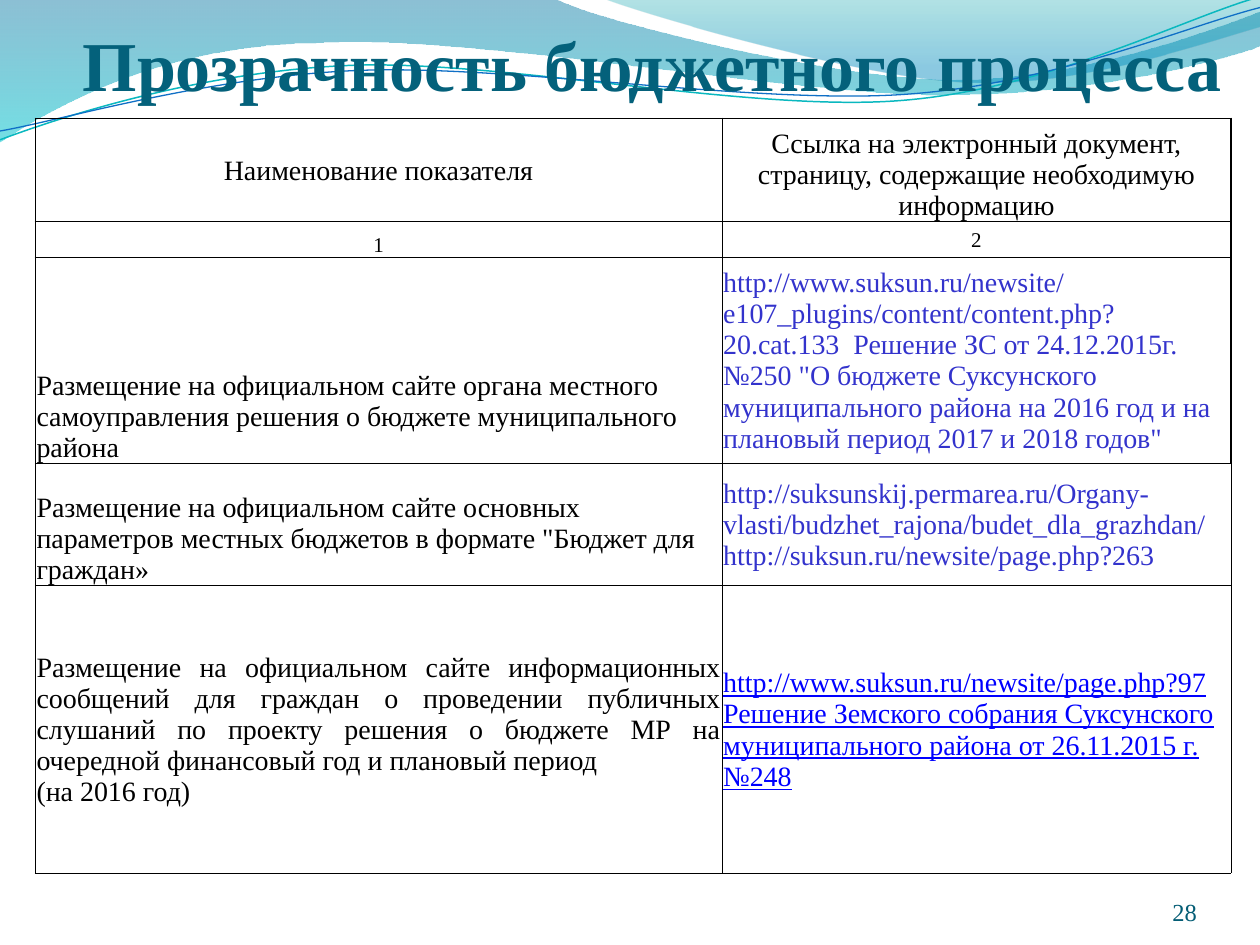
from lxml import etree
from pptx import Presentation
from pptx.dml.color import RGBColor
from pptx.enum.text import MSO_ANCHOR, PP_ALIGN
from pptx.oxml import parse_xml
from pptx.oxml.ns import nsdecls, qn
from pptx.util import Inches, Pt

LEFT, MID, RIGHT, FULL = PP_ALIGN.LEFT, PP_ALIGN.CENTER, PP_ALIGN.RIGHT, PP_ALIGN.JUSTIFY
CENTER, BOTTOM = MSO_ANCHOR.MIDDLE, MSO_ANCHOR.BOTTOM
FONT = "Times New Roman"
BLACK, BLUE, LINK = "000000", "3333CC", "0000FF"

TITLE = "Прозрачность бюджетного процесса"
PAGE = "28"

# Cells: paragraphs, size, colour, alignment, anchor
ROWS = [
    [(["Наименование показателя"], 16, BLACK, MID, CENTER),
     (["Ссылка на электронный документ, страницу, содержащие необходимую информацию"],
      16, BLACK, MID, BOTTOM)],
    [(["1"], 12, BLACK, MID, BOTTOM),
     (["2"], 12, BLACK, MID, CENTER)],
    [(["Размещение на официальном сайте органа местного самоуправления решения "
       "о бюджете муниципального района"], 16, BLACK, LEFT, BOTTOM),
     (["http://www.suksun.ru/newsite/e107_plugins/content/content.php?20.cat.133  "
       "Решение ЗС от 24.12.2015г. №250 \"О бюджете Суксунского муниципального района "
       "на 2016 год и на плановый период 2017 и 2018 годов\""], 16, BLUE, LEFT, CENTER)],
    [(["Размещение на официальном сайте основных параметров местных бюджетов "
       "в формате \"Бюджет для граждан»"], 16, BLACK, LEFT, BOTTOM),
     (["http://suksunskij.permarea.ru/Organy-vlasti/budzhet_rajona/budet_dla_grazhdan/",
       "http://suksun.ru/newsite/page.php?263"], 16, BLUE, LEFT, CENTER)],
    [(["Размещение на официальном сайте информационных сообщений для граждан "
       "о проведении публичных слушаний по проекту решения о бюджете МР "
       "на очередной финансовый год и плановый период",
       "(на 2016 год)"], 16, BLACK, FULL, CENTER),
     (["http://www.suksun.ru/newsite/page.php?97 Решение Земского собрания Суксунского "
       "муниципального района от 26.11.2015 г. №248"], 16, LINK, LEFT, CENTER)],
]
WIDTHS = [5.45, 4.04]
HEIGHTS = [0.82, 0.28, 1.64, 0.97, 2.28]

# Waves: a pair is a straight step, a six-tuple is a Bezier curve
BANDS = [
    ([(0, -0.01), (4.4, -0.01), (4.76, 0.17, 6.64, 0.63, 7.58, 0.63),
      (8.53, 0.63, 9.58, 0.26, 10, 0.09), (10.01, 0.36),
      (9.83, 0.44, 8.7, 0.76, 7.46, 0.75), (6.22, 0.75, 3.82, 0.28, 2.57, 0.34),
      (1.29, 0.35, 0.46, 0.83, -0.01, 1.13), (0, -0.01)],
     [(0, "0074A1", 45), (100, "00C6CF", 55)]),
    ([(4.79, -0.01), (5.09, 0.11, 6.82, 0.62, 7.69, 0.65),
      (8.56, 0.69, 9.61, 0.32, 10, 0.21), (10, 0), (4.79, -0.01)],
     [(0, "00A1A9", 30), (80, "008BBF", 45)]),
]
LINES = [
    ([(0, 1.11), (0.48, 0.93, 1.58, 0.57, 2.77, 0.52), (3.95, 0.47, 5.93, 0.89, 7.13, 0.8),
      (8.33, 0.71, 9.38, 0.15, 9.98, -0.02)], "0AB8BF", 0.85),
    ([(0, 1.04), (0.47, 0.96, 1.64, 0.61, 2.83, 0.56), (4.03, 0.51, 5.97, 0.83, 7.17, 0.75),
      (8.36, 0.67, 9.41, 0.21, 10, 0.06)], "0F6FC6", 0.75),
]


def paint(code):
    return RGBColor.from_string(code)


def draw(path, close):
    """Build an outline through the end points, then bend its curved steps."""
    ends = [(Inches(step[-2]), Inches(step[-1])) for step in path]
    pen = slide.shapes.build_freeform(*ends[0])
    pen.add_line_segments(ends[1:], close=close)
    shape = pen.convert_to_shape()
    shape.shadow.inherit = False
    for step, node in zip(path[1:], list(shape._element.iter(qn("a:lnTo")))):
        if len(step) == 6:
            node.tag = qn("a:cubicBezTo")
            for i in (2, 0):
                x, y = Inches(step[i]) - shape.left, Inches(step[i + 1]) - shape.top
                spot = etree.Element(qn("a:pt"), x=str(x), y=str(y))
                node.insert(0, spot)
    return shape


def blend(shape, stops):
    """Give a shape a top-down gradient with opacity."""
    marks = "".join(
        f'<a:gs pos="{pos * 1000}"><a:srgbClr val="{code}">'
        f'<a:alpha val="{alpha * 1000}"/></a:srgbClr></a:gs>' for pos, code, alpha in stops)
    fill = parse_xml(f'<a:gradFill {nsdecls("a")} rotWithShape="1"><a:gsLst>{marks}</a:gsLst>'
                     '<a:lin ang="5400000" scaled="0"/></a:gradFill>')
    shape._element.spPr.find(qn("a:custGeom")).addnext(fill)


def write(frame, lines, size, code, align, bold=None, under=None):
    frame.word_wrap = True
    frame.text = "\n".join(lines)
    for para in frame.paragraphs:
        para.alignment = align
        for run in para.runs:
            font = run.font
            font.name, font.size, font.bold, font.underline = FONT, Pt(size), bold, under
            font.color.rgb = paint(code)


def label(box, text, size, code, align, top=0, bold=None):
    frame = slide.shapes.add_textbox(*map(Inches, box)).text_frame
    frame.margin_left = frame.margin_right = frame.margin_bottom = 0
    frame.margin_top = Inches(top)
    frame.vertical_anchor = BOTTOM
    write(frame, [text], size, code, align, bold)


def edge(cell, side, width):
    line = etree.SubElement(cell._tc.get_or_add_tcPr(), qn("a:ln" + side), w=str(Pt(width)))
    fill = etree.SubElement(line, qn("a:solidFill"))
    etree.SubElement(fill, qn("a:srgbClr"), val=BLACK)


deck = Presentation()
deck.slide_width, deck.slide_height = Inches(10), Inches(7.5)
slide = deck.slides.add_slide(deck.slide_layouts[6])

# Waves at the top
for path, stops in BANDS:
    band = draw(path, True)
    band.line.fill.background()
    blend(band, stops)
for path, code, width in LINES:
    wave = draw(path, False)
    wave.fill.background()
    wave.line.color.rgb = paint(code)
    wave.line.width = Pt(width)

# Title and page number
label((0.35, 0.21, 9.65, 0.63), TITLE, 40, "04617B", MID, 0.05, True)
label((8.67, 6.95, 0.83, 0.4), PAGE, 14, "045D75", RIGHT)

# Table
table = slide.shapes.add_table(
    len(ROWS), len(WIDTHS), Inches(0.28), Inches(0.94),
    Inches(sum(WIDTHS)), Inches(sum(HEIGHTS))).table
table.first_row = table.horz_banding = False
for col, width in zip(table.columns, WIDTHS):
    col.width = Inches(width)
for row, height in zip(table.rows, HEIGHTS):
    row.height = Inches(height)
for r, row in enumerate(ROWS):
    for c, (lines, size, code, align, anchor) in enumerate(row):
        cell = table.cell(r, c)
        cell.margin_left = cell.margin_right = cell.margin_top = Inches(0.01)
        cell.margin_bottom = 0
        cell.vertical_anchor = anchor
        outer = {"L": c == 0 and r < 3, "R": c == 1 and r < 3, "T": r == 0, "B": False}
        for side, thick in outer.items():
            edge(cell, side, 1 if thick else 0.5)
        cell.fill.background()
        write(cell.text_frame, lines, size, code, align, under=True if code == LINK else None)

deck.save("out.pptx")
